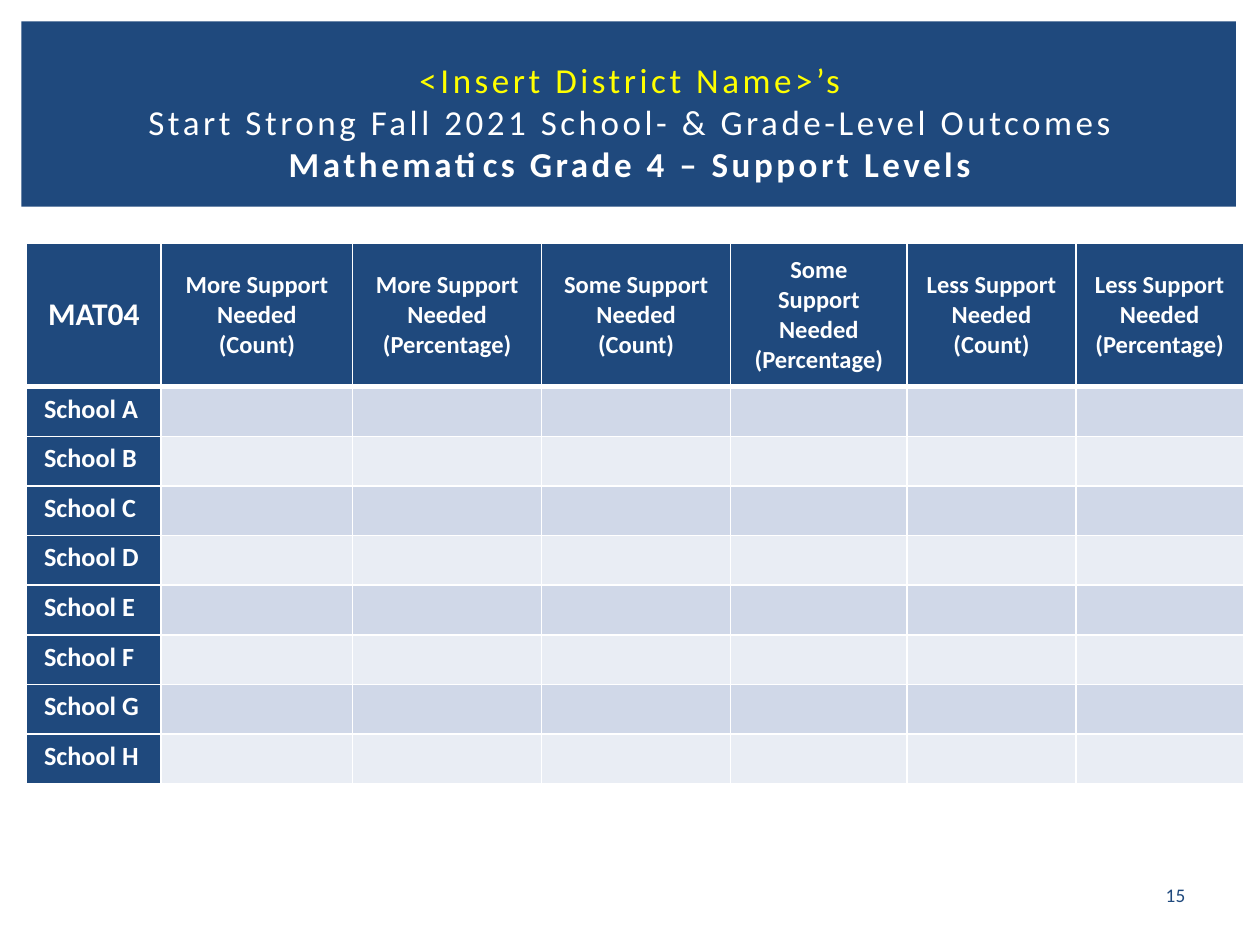
from lxml import etree
from pptx import Presentation
from pptx import util as u
from pptx.dml.color import RGBColor
from pptx.enum import shapes, text
from pptx.oxml import ns

NAVY = RGBColor(0x1F, 0x49, 0x7D)
WHITE = RGBColor(0xFF, 0xFF, 0xFF)
YELLOW = RGBColor(0xFF, 0xFF, 0x00)
BANDS = [RGBColor(0xE9, 0xED, 0xF4), RGBColor(0xD0, 0xD8, 0xE8)]


def style(paragraph, size, color, bold=False, align=text.PP_ALIGN.CENTER):
    paragraph.alignment = align
    for run in paragraph.runs:
        run.font.name = "Calibri"
        run.font.size = u.Pt(size)
        run.font.bold = bold
        run.font.color.rgb = color


def add_borders(cell, widths):
    """Draw white borders; widths gives points for left, right, top, bottom."""
    properties = cell._tc.get_or_add_tcPr()
    for position, (side, width) in enumerate(zip("LRTB", widths)):
        line = etree.Element(ns.qn(f"a:ln{side}"), w=str(u.Pt(width)))
        fill = etree.SubElement(line, ns.qn("a:solidFill"))
        etree.SubElement(fill, ns.qn("a:srgbClr"), val=str(WHITE))
        properties.insert(position, line)


deck = Presentation()
deck.slide_width, deck.slide_height = u.Inches(10), u.Inches(7.5)
slide = deck.slides.add_slide(deck.slide_layouts[6])

# Title banner
banner = slide.shapes.add_shape(shapes.MSO_SHAPE.RECTANGLE, u.Inches(0.17),
                                u.Inches(0.17), u.Inches(9.64), u.Inches(1.47))
banner.shadow.inherit = False
banner.fill.solid()
banner.fill.fore_color.rgb = NAVY
banner.line.fill.background()

# Title
title = slide.shapes.add_textbox(u.Inches(0.28), u.Inches(0.39),
                                 u.Inches(9.44), u.Inches(1.15)).text_frame
title.word_wrap = True
title.vertical_anchor = text.MSO_ANCHOR.MIDDLE
title.text = ("<Insert District Name>’s\n"
              "Start Strong Fall 2021 School- & Grade-Level Outcomes\n"
              "Mathematics Grade 4 – Support Levels")
for paragraph, color, bold in zip(title.paragraphs, (YELLOW, WHITE, WHITE),
                                  (False, False, True)):
    style(paragraph, 20, color, bold)
    for run in paragraph.runs:
        run._r.get_or_add_rPr().set("spc", "200")

# Support table: one row per school, count and percentage per support level
headings = ["MAT04"] + [f"{level} Support Needed\n({measure})"
                        for level in ("More", "Some", "Less")
                        for measure in ("Count", "Percentage")]
schools = [f"School {letter}" for letter in "ABCDEFGH"]
column_widths = [1.07, 1.52, 1.5, 1.5, 1.4, 1.34, 1.33]
row_heights = [1.14] + [0.394] * len(schools)

support = slide.shapes.add_table(
    len(row_heights), len(column_widths), u.Inches(0.21), u.Inches(1.93),
    u.Inches(sum(column_widths)), u.Inches(sum(row_heights))).table
for column, width in zip(support.columns, column_widths):
    column.width = u.Inches(width)
for row, height in zip(support.rows, row_heights):
    row.height = u.Inches(height)

for r in range(len(row_heights)):
    for c in range(len(column_widths)):
        cell = support.cell(r, c)
        labelled = r == 0 or c == 0
        cell.fill.solid()
        cell.fill.fore_color.rgb = NAVY if labelled else BANDS[r % 2]
        cell.margin_left = cell.margin_right = u.Inches(0.14)
        cell.margin_top = cell.margin_bottom = u.Inches(0.05 if labelled else 0.02)
        add_borders(cell, (1, 1, 3 if r == 1 else 1, 3 if r == 0 else 1))
        if r == 0:
            cell.vertical_anchor = text.MSO_ANCHOR.MIDDLE
            cell.text_frame.text = headings[c]
            for paragraph in cell.text_frame.paragraphs:
                style(paragraph, 18 if c == 0 else 14, WHITE, True)
        elif c == 0:
            cell.text_frame.text = schools[r - 1]
            style(cell.text_frame.paragraphs[0], 15, WHITE, True, text.PP_ALIGN.LEFT)

# Page number
page = slide.shapes.add_textbox(u.Inches(9.01), u.Inches(6.95),
                                u.Inches(0.64), u.Inches(0.3)).text_frame
page.word_wrap = True
page.vertical_anchor = text.MSO_ANCHOR.MIDDLE
page.text = "15"
style(page.paragraphs[0], 11, NAVY)

deck.save("out.pptx")
